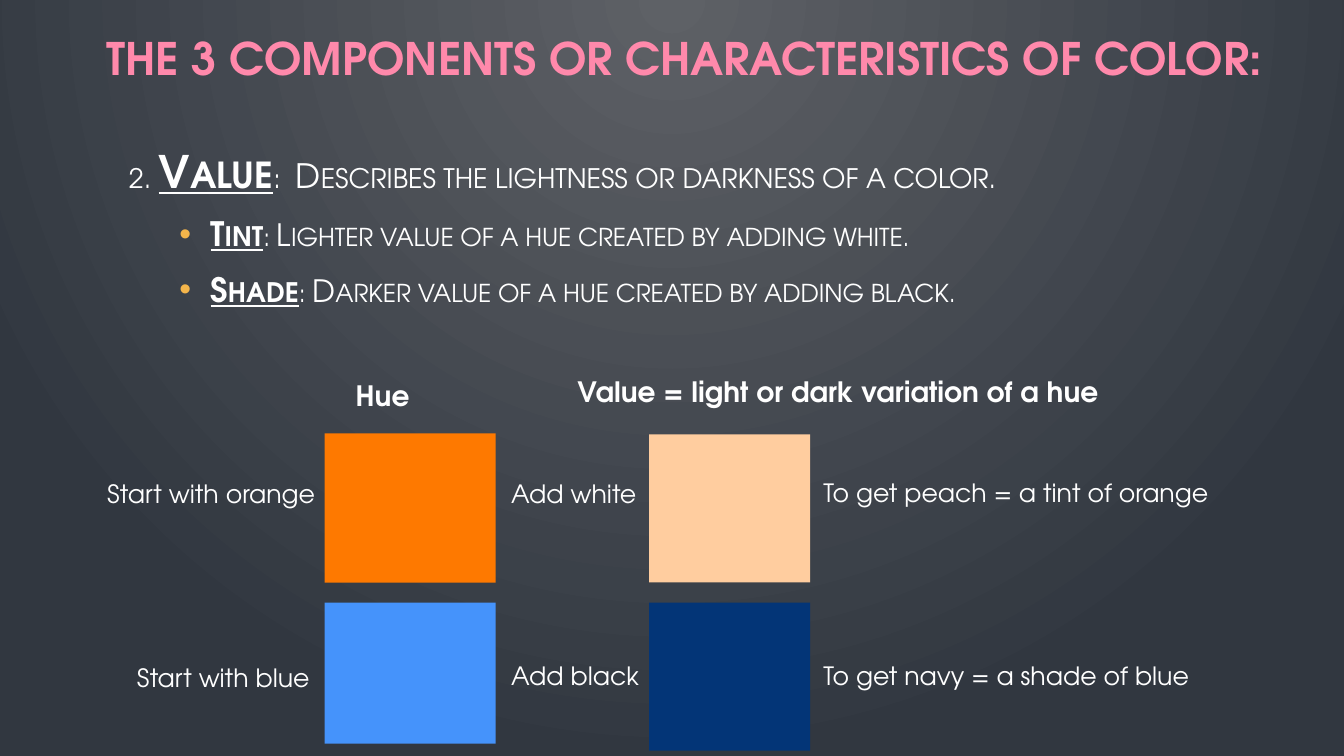
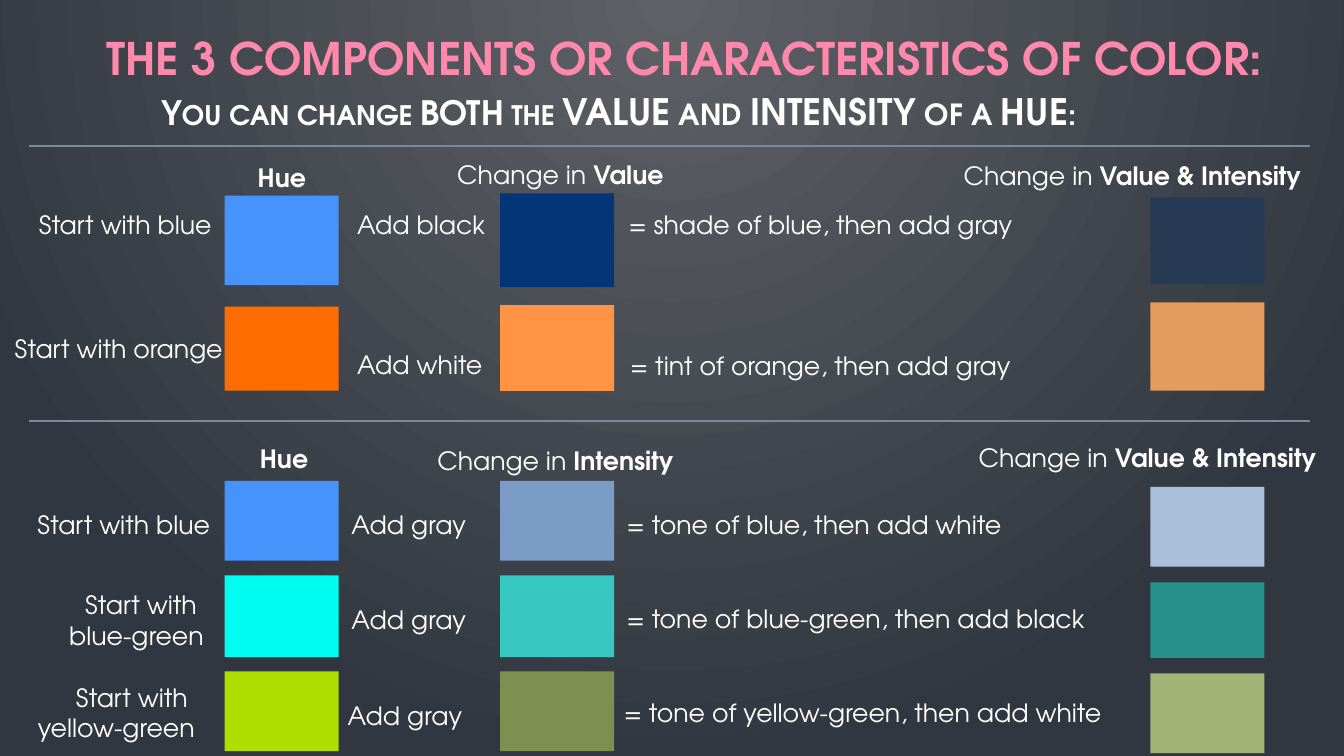
from lxml import etree
from pptx import Presentation
from pptx.dml.color import RGBColor
from pptx.enum import shapes, text
from pptx.oxml import ns
from pptx.util import Pt

SLIDE_WIDTH, SLIDE_HEIGHT = 960, 540
FONT = "TeX Gyre Adventor"
INSET = 7.2
COLORS = {
    "glow": "5E6166", "edge": "313740", "title": "FF89AB", "text": "FFFFFF",
    "bullet": "F4B54B", "rule": "7C899A",
    "blue": "4593FB", "navy": "033577", "orange": "FE7900", "peach": "FFCD9F",
    "deep orange": "FD6D01", "light orange": "FE9444", "gray navy": "273A53",
    "gray orange": "E49B5E", "blue tone": "7A9CC6", "pale blue": "AAC0DA",
    "blue-green": "01FDF1", "blue-green tone": "36C8C1", "dark teal": "27918C",
    "yellow-green": "AEDE00", "olive": "7E8F4F", "pale olive": "A3B375",
}
TITLE = "THE 3 COMPONENTS OR CHARACTERISTICS OF COLOR:"
TITLE_BOX = (69, 4.3, 871, 73.4)

# A text is a list of runs: (words, font format)
BOLD = {"bold": True}
TERM = {"bold": True, "underline": True}


def sized(size, **more):
    return {"size": Pt(size), **more}


# A group: swatch columns (left, width), headings (runs, left, top) and rows.
# A row: swatches (colour, top, height) and labels (lines, x, top);
# the first label of a row ends at its x, the others start there.
VALUE_SLIDE = {
    "body_box": (85, 38.9, 687, 246.2),
    "body": [
        (False, [("2. ", sized(24)), ("Value", sized(32, **TERM)),
                 (":  Describes the lightness or darkness of a color.", sized(24))]),
        (True, [("Tint", sized(24, **TERM)),
                (": Lighter value of a hue created by adding white.", sized(22))]),
        (True, [("Shade", sized(24, **TERM)),
                (": Darker value of a hue created by adding black.", sized(22))]),
    ],
    "rules": [],
    "groups": [{
        "heading_size": 20,
        "columns": [(232, 122), (463.7, 115)],
        "headings": [
            ([("Hue", BOLD)], 247, 267),
            ([("Value = light or dark variation of a hue", BOLD)], 405.4, 264),
        ],
        "rows": [
            ([("orange", 309.6, 106.6), ("peach", 310.3, 105.8)],
             [(["Start with orange"], 225, 338.4), (["Add white"], 358, 338),
              (["To get peach = a tint of orange"], 581, 337.5)]),
            ([("blue", 430.5, 100.8), ("navy", 430.5, 105.8)],
             [(["Start with blue"], 221, 469.4), (["Add black"], 358, 468),
              (["To get navy = a shade of blue"], 581, 468)]),
        ],
    }],
}

FINAL_HEADING = [("Change in ", {}), ("Value & Intensity", BOLD)]
CHANGE_COLUMNS = [(160.5, 81.4), (357.3, 81.4), (821.7, 81.4)]
BOTH_SLIDE = {
    "body_box": (108, 53.3, 780, 52.6),
    "body": [
        (False, [("You can change BOTH the ", sized(24, **BOLD)),
                 ("VALUE and INTENSITY of a HUE:", sized(26, **BOLD))]),
    ],
    "rules": [104.4, 301],
    "groups": [
        {
            "heading_size": 18,
            "columns": CHANGE_COLUMNS,
            "headings": [
                ([("Hue", BOLD)], 177, 112.3),
                ([("Change in ", {}), ("Value", BOLD)], 319.5, 110.2),
                (FINAL_HEADING, 681.2, 111),
            ],
            "rows": [
                ([("blue", 139.7, 64), ("navy", 138.2, 67), ("gray navy", 141, 62)],
                 [(["Start with blue"], 151, 146), (["Add black"], 248, 146),
                  (["= shade of blue, then add gray"], 442, 146)]),
                ([("deep orange", 219, 60), ("light orange", 218, 61.2),
                  ("gray orange", 216, 63)],
                 [(["Start with orange"], 159, 234.7), (["Add white"], 248, 246.2),
                  (["= tint of orange, then add gray"], 443, 247)]),
            ],
        },
        {
            "heading_size": 18,
            "columns": CHANGE_COLUMNS,
            "headings": [
                ([("Hue", BOLD)], 178.5, 313.2),
                ([("Change in ", {}), ("Intensity", BOLD)], 305.3, 314.6),
                (FINAL_HEADING, 692, 312.5),
            ],
            "rows": [
                ([("blue", 343.5, 57), ("blue tone", 343.5, 57), ("pale blue", 347.8, 57)],
                 [(["Start with blue"], 150, 360), (["Add gray"], 244, 360.5),
                  (["= tone of blue, then add white"], 440.6, 360)]),
                ([("blue-green", 411, 58.5), ("blue-green tone", 411, 58.5),
                  ("dark teal", 416, 54)],
                 [(["Start with ", "blue-green"], 145.4, 417.6), (["Add gray"], 244, 428.4),
                  (["= tone of blue-green, then add black"], 440.6, 427.7)]),
                ([("yellow-green", 479.5, 57), ("olive", 479.5, 57), ("pale olive", 481, 57)],
                 [(["Start with ", "yellow-green"], 139, 483.8), (["Add gray"], 241.2, 496.8),
                  (["= tone of yellow-green, then add white"], 438.5, 494.6)]),
            ],
        },
    ],
}


def rgb(name):
    return RGBColor.from_string(COLORS[name])


def paint_background(master):
    """Circular glow from the top centre, shared by all slides."""
    fill = master.background.fill
    fill.gradient()
    for stop, name in zip(fill.gradient_stops, ("glow", "edge")):
        stop.color.rgb = rgb(name)
    gradient = master.element.find(".//" + ns.qn("a:gradFill"))
    gradient.remove(gradient.find(ns.qn("a:lin")))
    circle = etree.SubElement(gradient, ns.qn("a:path"), path="circle")
    etree.SubElement(circle, ns.qn("a:fillToRect"),
                     l="43000", t="0", r="43000", b="100000")


def add_run(paragraph, words, formats, color="text", small_caps=False):
    run = paragraph.add_run()
    run.text = words
    run.font.name = FONT
    run.font.color.rgb = rgb(color)
    for name, value in formats.items():
        setattr(run.font, name, value)
    if small_caps:
        run.font._element.set("cap", "small")


def add_frame(slide, box, anchor):
    frame = slide.shapes.add_textbox(*map(Pt, box)).text_frame
    frame.word_wrap = True
    frame.vertical_anchor = anchor
    return frame


def paragraphs(frame, count):
    return [frame.paragraphs[0]] + [frame.add_paragraph() for _ in range(count - 1)]


def add_bullet(paragraph):
    props = paragraph._p.get_or_add_pPr()
    props.set("marL", str(Pt(58.3)))
    props.set("indent", str(-Pt(22.3)))
    color = etree.SubElement(props, ns.qn("a:buClr"))
    etree.SubElement(color, ns.qn("a:srgbClr"), val=COLORS["bullet"])
    etree.SubElement(props, ns.qn("a:buFont"), typeface="Arial")
    etree.SubElement(props, ns.qn("a:buChar"), char="•")


def add_body(slide, box, lines):
    frame = add_frame(slide, box, text.MSO_ANCHOR.MIDDLE)
    for paragraph, (bulleted, runs) in zip(paragraphs(frame, len(lines)), lines):
        paragraph.space_before, paragraph.space_after = Pt(5), Pt(6)
        if bulleted:
            add_bullet(paragraph)
        for words, formats in runs:
            add_run(paragraph, words, formats, small_caps=True)


def add_label(slide, lines, x, top, size=18, ends_at_x=False):
    """Lines of runs in a box wide enough for the longest line."""
    longest = max(sum(len(words) for words, _ in runs) for runs in lines)
    width = longest * size / 2 + 36
    left = max(0, x + INSET - width) if ends_at_x else x
    right = x + INSET if ends_at_x else min(SLIDE_WIDTH, x + width)
    height = len(lines) * size * 1.25 + INSET
    frame = add_frame(slide, (left, top, right - left, height), text.MSO_ANCHOR.TOP)
    for paragraph, runs in zip(paragraphs(frame, len(lines)), lines):
        paragraph.alignment = text.PP_ALIGN.RIGHT if ends_at_x else text.PP_ALIGN.LEFT
        for words, formats in runs:
            add_run(paragraph, words, {**sized(size), **formats})


def add_swatch(slide, color, left, top, width, height):
    swatch = slide.shapes.add_shape(shapes.MSO_SHAPE.RECTANGLE,
                                    *map(Pt, (left, top, width, height)))
    swatch.shadow.inherit = False
    swatch.fill.solid()
    swatch.fill.fore_color.rgb = rgb(color)
    swatch.line.fill.background()


def add_rule(slide, y):
    rule = slide.shapes.add_connector(shapes.MSO_CONNECTOR.STRAIGHT,
                                      *map(Pt, (21, y, 936, y)))
    rule.line.color.rgb = rgb("rule")
    rule.line.width = Pt(1.5)
    etree.SubElement(rule._element.spPr, ns.qn("a:effectLst"))


def add_group(slide, group):
    for runs, left, top in group["headings"]:
        add_label(slide, [runs], left, top, group["heading_size"])
    for swatches, labels in group["rows"]:
        for (left, width), (color, top, height) in zip(group["columns"], swatches):
            add_swatch(slide, color, left, top, width, height)
        for index, (lines, x, top) in enumerate(labels):
            add_label(slide, [[(line, {})] for line in lines], x, top,
                      ends_at_x=index == 0)


def add_slide(prs, content):
    slide = prs.slides.add_slide(prs.slide_layouts[6])
    title = add_frame(slide, TITLE_BOX, text.MSO_ANCHOR.MIDDLE)
    add_run(title.paragraphs[0], TITLE, sized(32, **BOLD), "title")
    add_body(slide, content["body_box"], content["body"])
    for y in content["rules"]:
        add_rule(slide, y)
    for group in content["groups"]:
        add_group(slide, group)


def main():
    prs = Presentation()
    prs.slide_width, prs.slide_height = Pt(SLIDE_WIDTH), Pt(SLIDE_HEIGHT)
    paint_background(prs.slide_master)
    for content in (VALUE_SLIDE, BOTH_SLIDE):
        add_slide(prs, content)
    prs.save("out.pptx")


if __name__ == "__main__":
    main()
